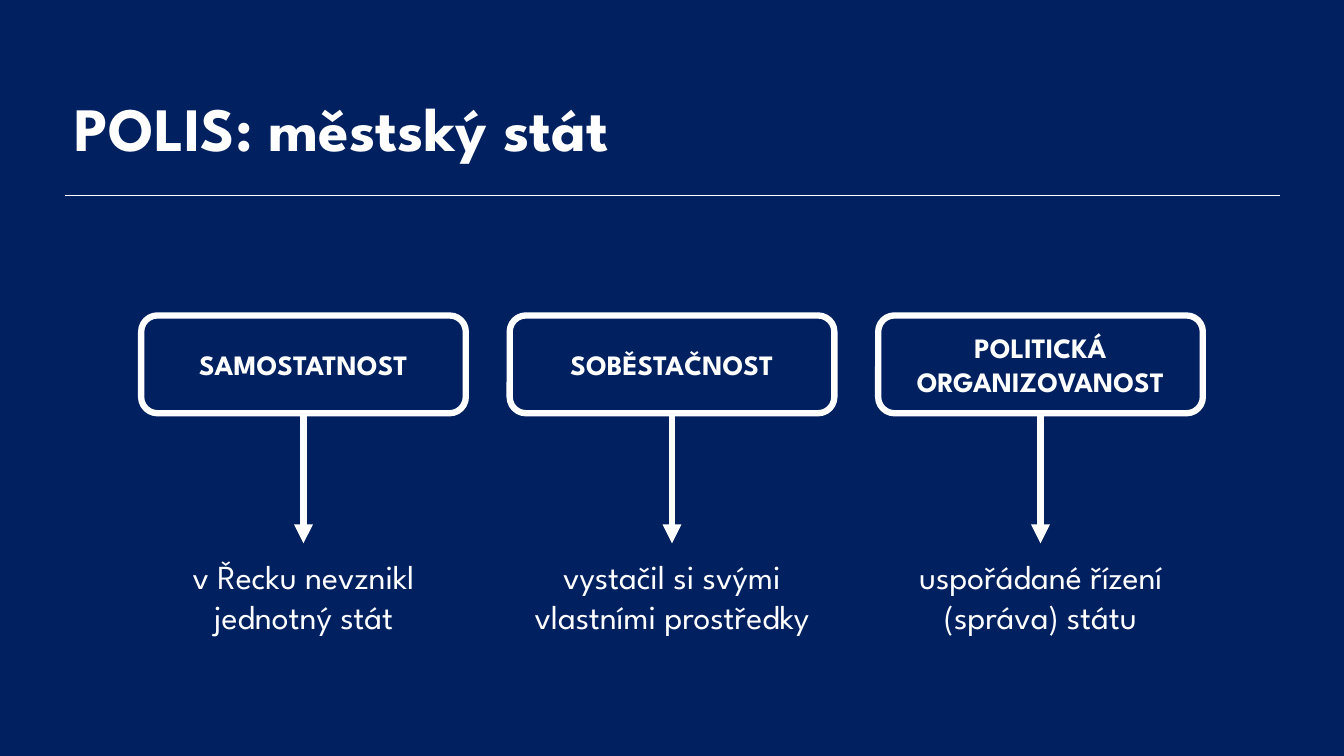
from pptx import Presentation
from pptx.dml.color import RGBColor
from pptx.enum.shapes import MSO_CONNECTOR as CONN, MSO_SHAPE as SHAPE
from pptx.enum.text import MSO_ANCHOR as ANCHOR, PP_ALIGN as ALIGN
from pptx.oxml.ns import qn
from pptx.util import Inches, Pt
from lxml.etree import SubElement

FONT = "League Spartan"
NAVY, WHITE = "002060", "FFFFFF"
FEATURES = [
    ("SAMOSTATNOST", 0.44, "v Řecku nevznikl jednotný stát", 2.94),
    ("SOBĚSTAČNOST", 0.44, "vystačil si svými vlastními prostředky", 3.5),
    ("POLITICKÁ ORGANIZOVANOST", 0.77, "uspořádané řízení (správa) státu", 3.5),
]


def color(hex_value):
    """Turn a hex string into a colour."""
    return RGBColor.from_string(hex_value)


def add_text(s, box, text, size, bold=False, align=ALIGN.CENTER, anchor=ANCHOR.MIDDLE):
    """Add a wrapped one-paragraph text box and return its paragraph."""
    tf = s.shapes.add_textbox(*map(Inches, box)).text_frame
    tf.word_wrap = True
    tf.vertical_anchor = anchor
    p = tf.paragraphs[0]
    p.alignment = align
    r = p.add_run()
    r.text = text
    r.font.name, r.font.size, r.font.bold = FONT, Pt(size), bold
    r.font.color.rgb = color(WHITE)
    return p


def add_line(s, x1, y1, x2, y2, width):
    """Add a plain white straight connector."""
    line = s.shapes.add_connector(CONN.STRAIGHT, *map(Inches, (x1, y1, x2, y2)))
    line.line.color.rgb = color(WHITE)
    line.line.width = Pt(width)
    SubElement(line._element.spPr, qn("a:effectLst"))
    return line


def add_title(s, x, y, w, h):
    """Place the heading with the rule under it."""
    p = add_text(s, (x, y, 11.5, h), "POLIS: městský stát", 44, True,
                 ALIGN.LEFT, ANCHOR.TOP)
    p.line_spacing = 0.9
    add_line(s, x, y + h + 0.02, x + w, y + h + 0.02, 0.5)


def add_feature(s, x, y, w, h, label, label_h, note, note_w):
    """Place a framed label, its arrow and the explanation below."""
    sp = s.shapes.add_shape(SHAPE.ROUNDED_RECTANGLE, *map(Inches, (x, y, w, h)))
    sp.shadow.inherit = False
    sp.fill.background()
    sp.line.color.rgb = color(WHITE)
    sp.line.width = Pt(4.5)
    mid, bottom = x + w / 2, y + h
    label_w = w - 0.25
    add_text(s, (mid - label_w / 2, y + (h - label_h) / 2, label_w, label_h),
             label, 20, True)
    arrow = add_line(s, mid, bottom, mid, bottom + 1.29, 4.5)
    arrow.begin_connect(sp, 2)
    SubElement(arrow.line._get_or_add_ln(), qn("a:tailEnd"), type="triangle")
    add_text(s, (mid - note_w / 2, bottom + 1.36, note_w, 0.91), note, 24)


def main():
    """Build and save the slide."""
    prs = Presentation()
    prs.slide_width, prs.slide_height = Inches(13.33), Inches(7.5)
    s = prs.slides.add_slide(prs.slide_layouts[6])
    s.background.fill.solid()
    s.background.fill.fore_color.rgb = color(NAVY)
    add_title(s, 0.64, 0.93, 12.06, 0.99)
    for i, feature in enumerate(FEATURES):
        add_feature(s, 1.4 + i * 3.655, 3.13, 3.22, 0.97, *feature)
    prs.save("out.pptx")


if __name__ == "__main__":
    main()
